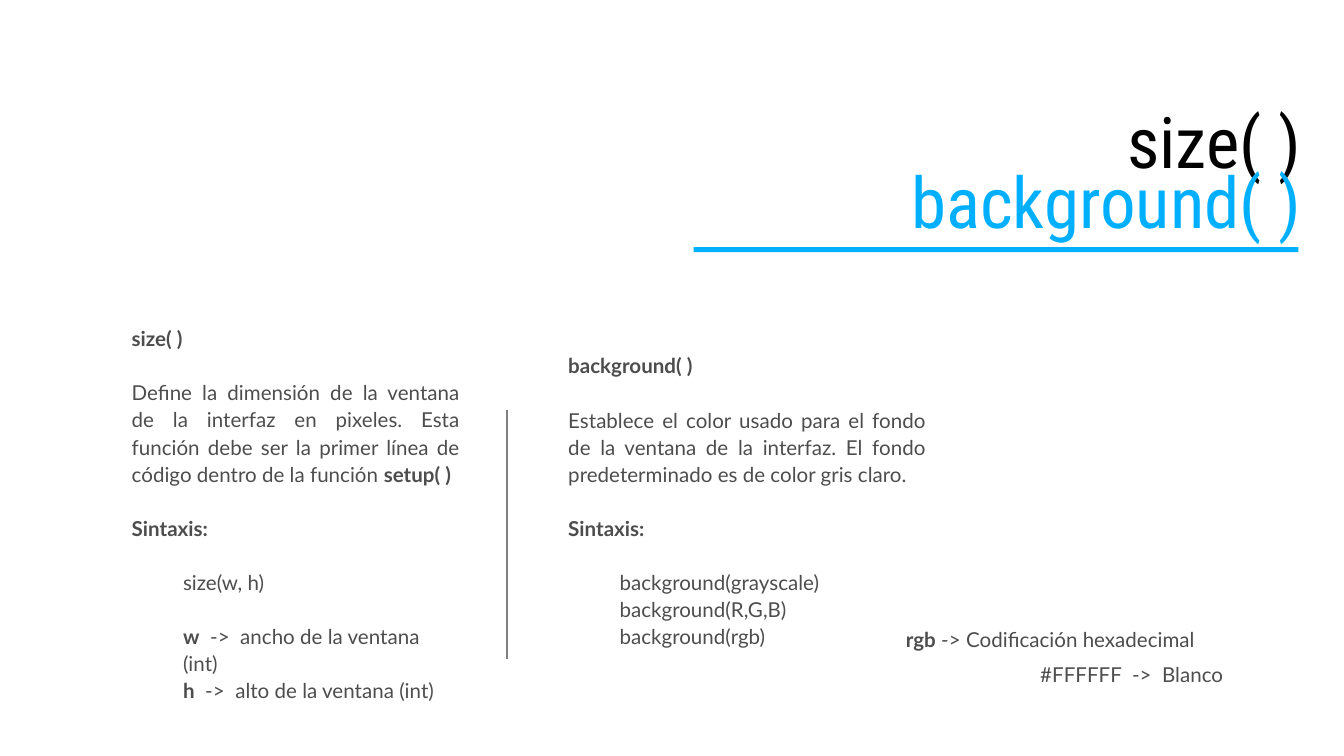
from pptx import Presentation, util as u
from pptx.dml.color import RGBColor
from pptx.enum import shapes, text
from lxml import etree

THEME = {
    "black": "000000", "blue": "00AFFF", "text": "4D4D4D", "rule": "808080",
    "title_font": "Roboto Condensed", "body_font": "Lato",
    "title_size": 38, "body_size": 11, "gap": 14.5,
}
INDENT = 0.97
LEFT, RIGHT, JUSTIFY = text.PP_ALIGN.LEFT, text.PP_ALIGN.RIGHT, text.PP_ALIGN.JUSTIFY

# Paragraph: runs of (text, bold), then its options
TITLE = [
    ([("size( )", False)], {"color": "black"}),
    ([("background( )", False)], {"color": "blue"}),
]
SIZE = [
    ([("size( )", True)], {}),
    ([("Define la dimensión de la ventana de la interfaz en pixeles. Esta función debe ser "
       "la primer línea de código dentro de la función ", False), ("setup( )", True)],
     {"gap": True, "align": JUSTIFY}),
    ([("Sintaxis:", True)], {"gap": True}),
    ([("size(w, h)", False)], {"gap": True, "indent": INDENT}),
    ([("w", True), ("  ->  ancho de la ventana (int)", False)], {"gap": True, "indent": INDENT}),
    ([("h", True), ("  ->  alto de la ventana (int)", False)], {"indent": INDENT}),
]
BACKGROUND = [
    ([("background( )", True)], {}),
    ([("Establece el color usado para el fondo de la ventana de la interfaz. "
       "El fondo predeterminado es de color gris claro.", False)], {"gap": True}),
    ([("Sintaxis:", True)], {"gap": True}),
    ([("background(grayscale)", False)], {"gap": True, "indent": INDENT}),
    ([("background(R,G,B)", False)], {"indent": INDENT}),
    ([("background(rgb)", False)], {"indent": INDENT}),
]
HEX_NOTE = [
    ([("rgb", True), (" -> Codificación hexadecimal", False)], {}),
    ([("#FFFFFF  ->  Blanco", False)], {"indent": 2.54}),
]

# Paragraphs, box in cm, kind of type, alignment, line spacing, bottom inset in cm
BLOCKS = [
    (TITLE, (16.31, 2.13, 8.28, 2.57), "title", RIGHT, 0.7, 0),
    (BACKGROUND, (10.74, 5.87, 6.76, 7.67), "body", JUSTIFY, 1.1, 0.51),
    (SIZE, (2.49, 5.87, 6.2, 7.67), "body", LEFT, 1.1, 0),
    (HEX_NOTE, (17.12, 11.73, 6.38, 1.19), "body", LEFT, 1.4, 0),
]
UNDERLINE = (13.11, 4.67, 11.43, 0.1)
DIVIDER = (9.58, 12.45, 9.58, 7.75)


def cm(values):
    return [u.Cm(v) for v in values]


def rgb(name):
    return RGBColor.from_string(THEME[name])


def add_block(s, paragraphs, box, kind, align, spacing, inset):
    tf = s.shapes.add_textbox(*cm(box)).text_frame
    tf.word_wrap = True
    tf.vertical_anchor = text.MSO_ANCHOR.MIDDLE
    tf.margin_left = tf.margin_right = tf.margin_top = 0
    tf.margin_bottom = u.Cm(inset)
    for i, (runs, options) in enumerate(paragraphs):
        p = tf.add_paragraph() if i else tf.paragraphs[0]
        p.alignment = options.get("align", align)
        p.line_spacing = spacing
        if options.get("gap"):
            p.space_before = u.Pt(THEME["gap"])
        if "indent" in options:
            pPr = p._p.get_or_add_pPr()
            pPr.set("marL", str(u.Cm(options["indent"])))
            pPr.set("indent", "0")
        for words, bold in runs:
            r = p.add_run()
            r.text = words
            r.font.name = THEME[kind + "_font"]
            r.font.size = u.Pt(THEME[kind + "_size"])
            r.font.bold = bold
            r.font.color.rgb = rgb(options.get("color", "text"))


def add_underline(s):
    sp = s.shapes.add_shape(shapes.MSO_SHAPE.RECTANGLE, *cm(UNDERLINE))
    sp.shadow.inherit = False
    sp.fill.solid()
    sp.fill.fore_color.rgb = rgb("blue")
    sp.line.fill.background()


def add_divider(s):
    line = s.shapes.add_connector(shapes.MSO_CONNECTOR.STRAIGHT, *cm(DIVIDER))
    line.line.color.rgb = rgb("rule")
    line.line.width = u.Pt(1)
    etree.SubElement(line._element.spPr,
                     "{http://schemas.openxmlformats.org/drawingml/2006/main}effectLst")


def main():
    prs = Presentation()
    prs.slide_width, prs.slide_height = cm((25.4, 14.29))
    s = prs.slides.add_slide(prs.slide_layouts[6])
    for block in BLOCKS:
        add_block(s, *block)
    add_underline(s)
    add_divider(s)
    prs.save("out.pptx")


if __name__ == "__main__":
    main()
